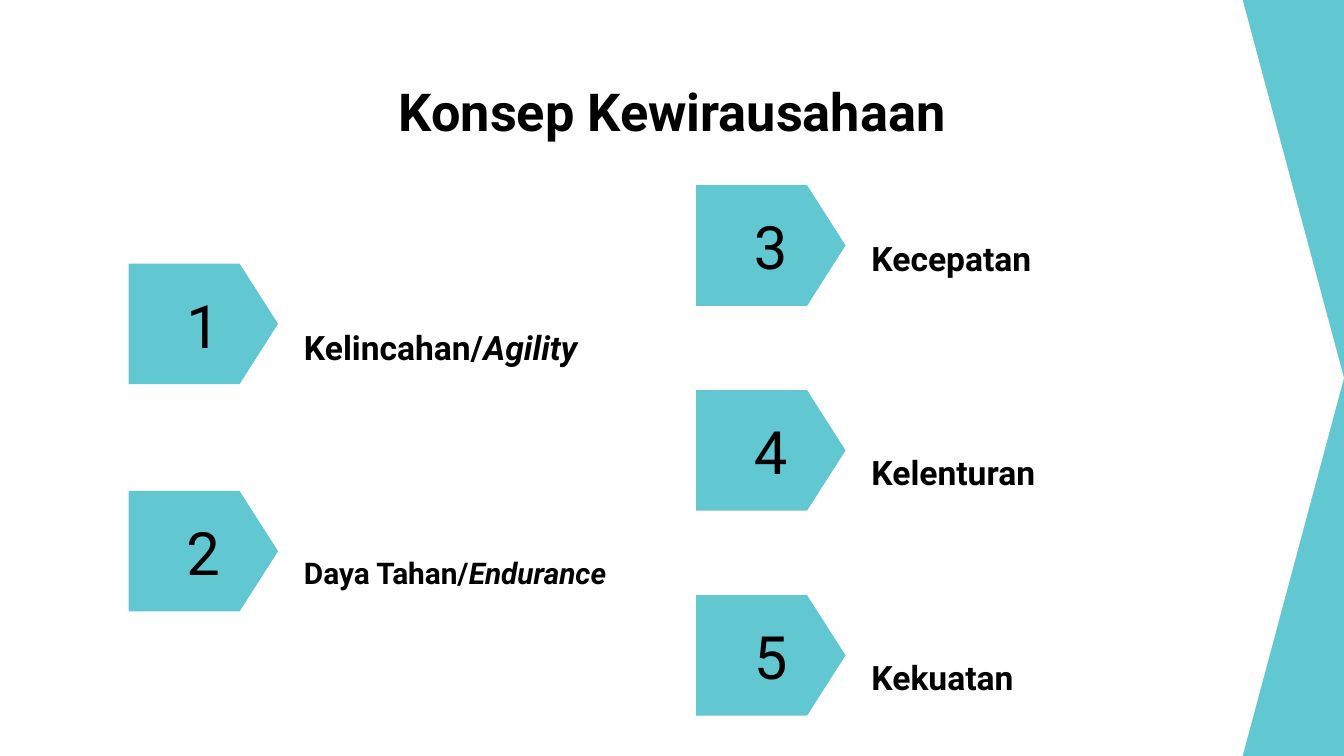
import pptx
import pptx.dml.color
import pptx.enum.shapes
import pptx.enum.text
import pptx.util

Pt = pptx.util.Pt
ALIGN = pptx.enum.text.PP_ALIGN
ANCHOR = pptx.enum.text.MSO_ANCHOR
TEAL = "61C7D0"


def rgb(color):
    return pptx.dml.color.RGBColor.from_string(color)


def add_plate(s, x, y, w, h, point, color):
    """Add a pentagon arrow; point is the tip length relative to the height."""
    sp = s.shapes.add_shape(pptx.enum.shapes.MSO_SHAPE.PENTAGON, Pt(x), Pt(y), Pt(w), Pt(h))
    sp.adjustments[0] = point
    sp.shadow.inherit = False
    sp.fill.solid()
    sp.fill.fore_color.rgb = rgb(color)
    sp.line.fill.background()


def add_text(s, x, y, w, h, parts, size, bold=True, align=ALIGN.CENTER, anchor=ANCHOR.MIDDLE):
    """Add one paragraph; the second of the parts, if any, is italic."""
    tf = s.shapes.add_textbox(Pt(x), Pt(y), Pt(w), Pt(h)).text_frame
    tf.word_wrap = True
    tf.vertical_anchor = anchor
    tf.margin_left = tf.margin_right = tf.margin_top = tf.margin_bottom = Pt(7.2)
    p = tf.paragraphs[0]
    p.alignment = align
    for i, part in enumerate(parts):
        r = p.add_run()
        r.text = part
        r.font.name = "Roboto"
        r.font.size = Pt(size)
        r.font.bold = bold
        if i == 1:
            r.font.italic = True
        r.font.color.rgb = rgb("000000")
    return p


prs = pptx.Presentation()
prs.slide_width, prs.slide_height = Pt(720), Pt(405)
s = prs.slides.add_slide(prs.slide_layouts[6])
s.background.fill.solid()
s.background.fill.fore_color.rgb = rgb(TEAL)

add_plate(s, 0, 0, 720, 405, 0.134, "FFFFFF")
add_text(s, 56.2, 35.3, 607.6, 45.4, ["Konsep Kewirausahaan"], 28, anchor=ANCHOR.TOP)

# Plate left and top, label top, label parts, label size
concepts = [
    (69, 141.2, 170, ["Kelincahan/", "Agility"], 18),
    (69, 263, 291, ["Daya Tahan/", "Endurance"], 16),
    (373, 99.2, 122.4, ["Kecepatan"], 18),
    (373, 209, 237, ["Kelenturan"], 18),
    (373, 318.8, 347, ["Kekuatan"], 18),
]
for number, (x, y, label_y, parts, size) in enumerate(concepts, 1):
    add_plate(s, x, y, 80, 64.6, 0.319, TEAL)
    add_text(s, x + 17.2, y + 9.8, 45.4, 45.4, [str(number)], 32, bold=False)
    p = add_text(s, x + 86.8, label_y, 187.2, 28.8, parts, size, align=ALIGN.LEFT)
    p.line_spacing = 1.15
    p.space_after = Pt(16)

prs.save("out.pptx")
